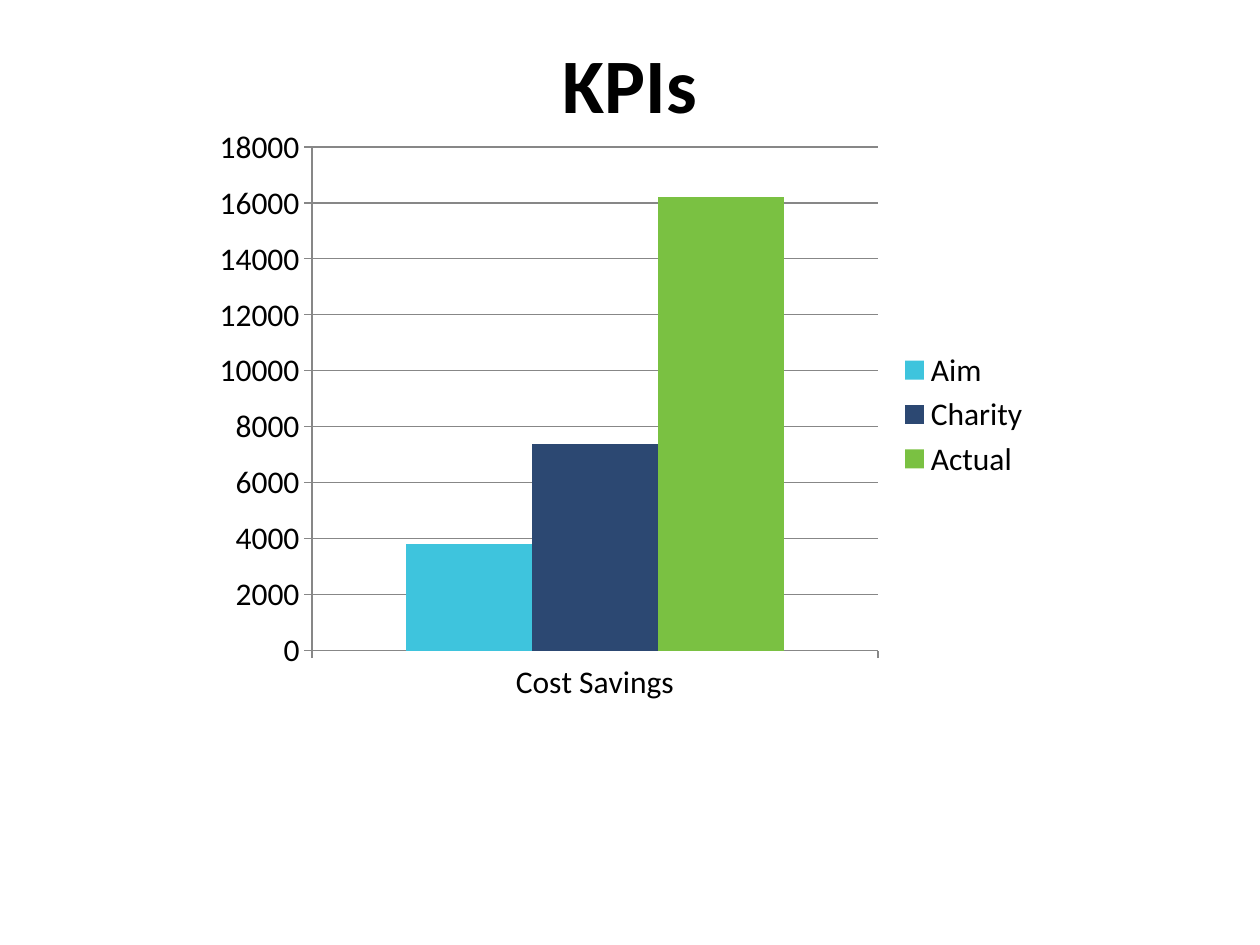
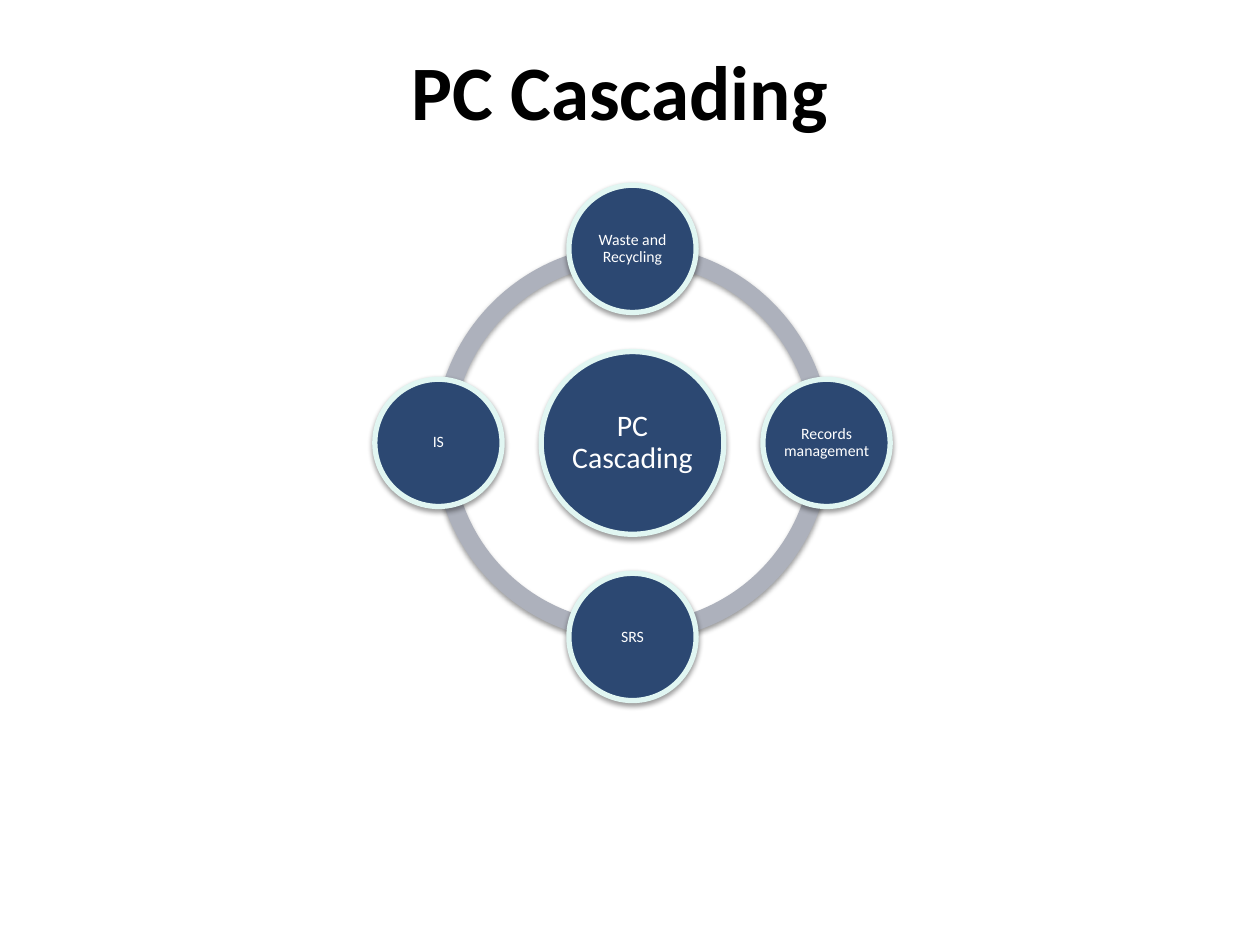
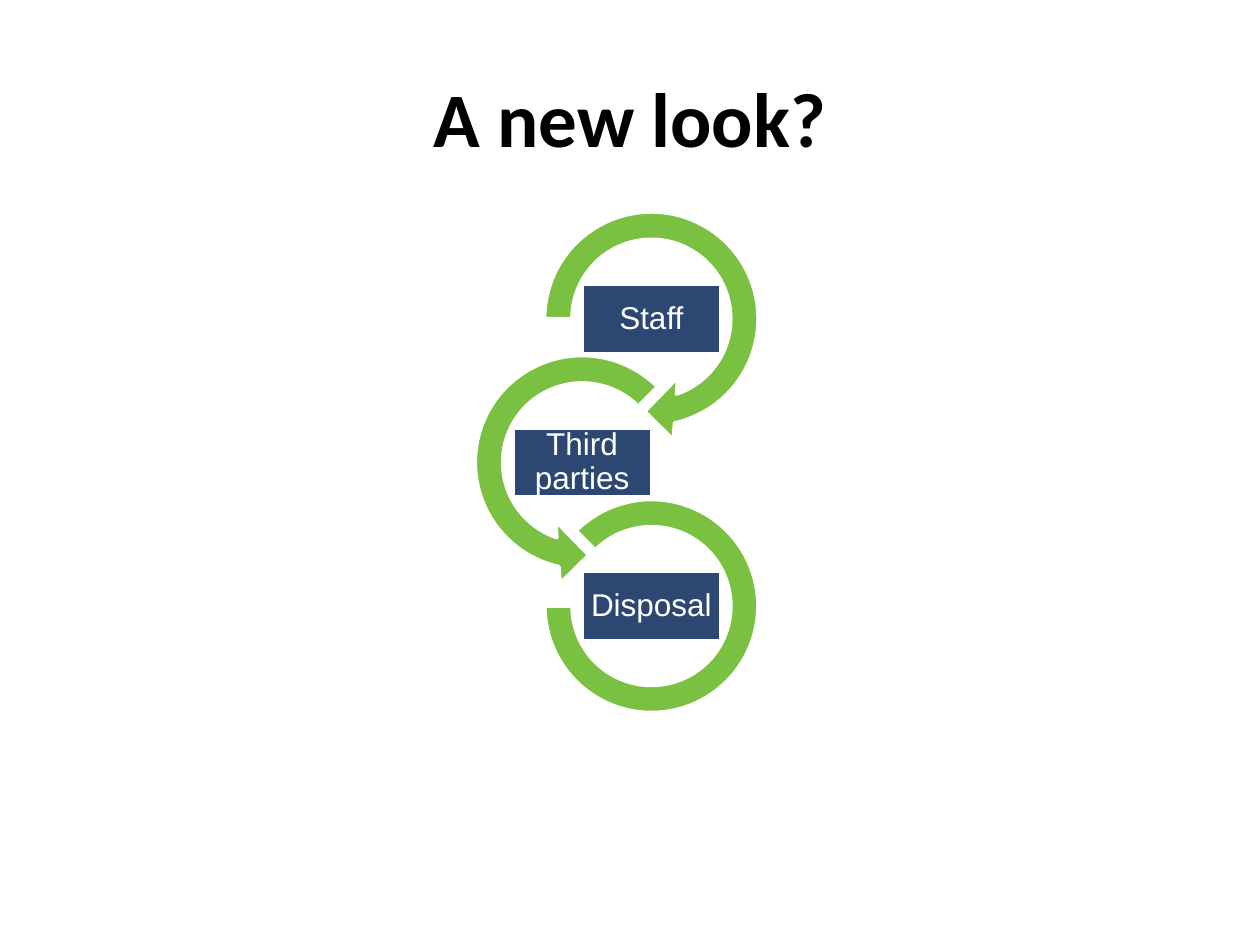
import math

from lxml import etree
from pptx import Presentation
from pptx.chart.data import CategoryChartData
from pptx.dml.color import RGBColor
from pptx.enum.chart import XL_CHART_TYPE, XL_LEGEND_POSITION, XL_TICK_MARK
from pptx.enum.shapes import MSO_SHAPE
from pptx.enum.text import MSO_ANCHOR, PP_ALIGN
from pptx.oxml.ns import qn
from pptx.util import Inches, Pt

COLUMNS = XL_CHART_TYPE.COLUMN_CLUSTERED
OUTSIDE = XL_TICK_MARK.OUTSIDE
LEGEND_RIGHT = XL_LEGEND_POSITION.RIGHT
ARC = MSO_SHAPE.BLOCK_ARC
ARROW = MSO_SHAPE.CIRCULAR_ARROW
LEFT_ARROW = MSO_SHAPE.LEFT_CIRCULAR_ARROW
CIRCLE = MSO_SHAPE.OVAL
BOX = MSO_SHAPE.RECTANGLE
MIDDLE = MSO_ANCHOR.MIDDLE
CENTER = PP_ALIGN.CENTER

BLACK, WHITE = "000000", "FFFFFF"
NAVY, GREEN, CYAN = "2C4872", "7AC142", "3EC4DD"
MINT, RING_GREY, AXIS_GREY = "E1F6F2", "ADB1BC", "878787"
TITLE_ONLY = 5

KPI_CATEGORY = "Cost Savings"
KPIS = [("Aim", 3800, CYAN), ("Charity", 7400, NAVY), ("Actual", 16200, GREEN)]

HUB = "PC Cascading"
SATELLITES = ["Waste and Recycling", "Records management", "SRS", "IS"]
HUB_CENTER = (5.02, 3.515)
ORBIT, HUB_SIZE, SATELLITE_SIZE, RING_SIZE = 1.54, 1.45, 1.01, 3.15


def angle(degrees):
    """Adjustment value for an angle, which is stored in 60000ths of a degree."""
    return degrees * 0.6


# label, sideways place, arc shape, arc size, arc adjustments
STEPS = [
    ("Staff", 1, ARROW, 1.97, (0.11, angle(19.04), angle(75), angle(180), 0.125)),
    ("Third parties", 0, LEFT_ARROW, 1.97,
     (0.11, angle(19.04), angle(105), angle(315), 0.125)),
    ("Disposal", 1, ARC, 1.69, (angle(225), angle(180), 0.127)),
]
FIRST_STEP = (4.62, 2.53)
STEP_ACROSS, STEP_DOWN = 0.55, 1.14
BOX_SIZE = (1.1, 0.55)


def rgb(color):
    return RGBColor.from_string(color)


def style_font(font, name, size, color, bold=False):
    font.name, font.size, font.bold = name, Pt(size), bold
    font.color.rgb = rgb(color)


def add_titled_slide(deck, title, left, top, width, height):
    slide = deck.slides.add_slide(deck.slide_layouts[TITLE_ONLY])
    holder = slide.shapes.title
    holder.left, holder.top = Inches(left), Inches(top)
    holder.width, holder.height = Inches(width), Inches(height)
    holder.text_frame.text = title
    holder.text_frame.vertical_anchor = MIDDLE
    paragraph = holder.text_frame.paragraphs[0]
    paragraph.alignment = CENTER
    style_font(paragraph.font, "Calibri", 44, BLACK, bold=True)
    return slide


def add_centered(slide, kind, center, size, fill, line=None, adjustments=()):
    """Add a preset shape around its center; line is a (color, points) pair."""
    (x, y), (width, height) = center, size
    shape = slide.shapes.add_shape(kind, Inches(x - width / 2), Inches(y - height / 2),
                                   Inches(width), Inches(height))
    for index, value in enumerate(adjustments):
        shape.adjustments[index] = value
    shape.shadow.inherit = False
    shape.fill.solid()
    shape.fill.fore_color.rgb = rgb(fill)
    if line:
        shape.line.color.rgb, shape.line.width = rgb(line[0]), Pt(line[1])
    else:
        shape.line.fill.background()
    return shape


def write_label(shape, label, font_name, size, inset):
    frame = shape.text_frame
    frame.word_wrap = True
    frame.vertical_anchor = MIDDLE
    frame.margin_left = frame.margin_right = Inches(inset)
    frame.margin_top = frame.margin_bottom = Inches(inset)
    frame.text = label
    paragraph = frame.paragraphs[0]
    paragraph.alignment = CENTER
    paragraph.line_spacing = 0.9
    style_font(paragraph.font, font_name, size, WHITE)


def drop_shadow(shape):
    effects = shape.element.spPr.find(qn("a:effectLst"))
    shadow = etree.SubElement(effects, qn("a:outerShdw"), blurRad=str(Pt(3.1)),
                              dist=str(Pt(1.6)), dir="5400000", rotWithShape="0")
    color = etree.SubElement(shadow, qn("a:srgbClr"), val=BLACK)
    etree.SubElement(color, qn("a:alpha"), val="38000")


def build_kpis(deck):
    slide = add_titled_slide(deck, "KPIs", 0, 0, 10, 1.31)
    data = CategoryChartData()
    data.categories = [KPI_CATEGORY]
    for name, value, _ in KPIS:
        data.add_series(name, [value])
    chart = slide.shapes.add_chart(COLUMNS, Inches(1.61), Inches(0.92),
                                   Inches(6.67), Inches(4.74), data).chart
    style_font(chart.font, "Calibri", 18, BLACK)
    chart.has_title = False
    chart.has_legend = True
    chart.legend.position = LEGEND_RIGHT
    chart.legend.include_in_layout = False

    plot = chart.plots[0]
    plot.gap_width, plot.overlap = 150, 0
    plot.vary_by_categories = False
    for series, (_, _, color) in zip(plot.series, KPIS):
        series.format.fill.solid()
        series.format.fill.fore_color.rgb = rgb(color)

    values = chart.value_axis
    values.minimum_scale, values.maximum_scale, values.major_unit = 0, 18000, 2000
    values.has_major_gridlines = True
    for axis in (values, chart.category_axis):
        axis.major_tick_mark = OUTSIDE
    for part in (values, chart.category_axis, values.major_gridlines):
        part.format.line.color.rgb = rgb(AXIS_GREY)
        part.format.line.width = Pt(0.75)


def build_cascade(deck):
    slide = add_titled_slide(deck, HUB, 0.43, 0.29, 8.98, 0.84)
    sector = 360 / len(SATELLITES)
    for index in range(len(SATELLITES)):
        start = index * sector
        ends = (angle(start), angle((start + sector) % 360), 0.046)
        drop_shadow(add_centered(slide, ARC, HUB_CENTER, (RING_SIZE, RING_SIZE),
                                 RING_GREY, adjustments=ends))

    circles = [(HUB, HUB_CENTER, HUB_SIZE, 17, 0.02)]
    for index, label in enumerate(SATELLITES):
        turn = math.radians(index * sector - 90)
        center = (HUB_CENTER[0] + ORBIT * math.cos(turn),
                  HUB_CENTER[1] + ORBIT * math.sin(turn))
        circles.append((label, center, SATELLITE_SIZE, 9, 0.01))
    for label, center, size, points, inset in circles:
        circle = add_centered(slide, CIRCLE, center, (size, size), NAVY, (MINT, 3))
        drop_shadow(circle)
        write_label(circle, label, "Calibri", points, inset)


def build_new_look(deck):
    slide = add_titled_slide(deck, "A new look?", 0, 0.3, 10, 1.25)
    outline = (WHITE, 2)
    for row, (label, column, kind, size, adjustments) in enumerate(STEPS):
        center = (FIRST_STEP[0] + column * STEP_ACROSS, FIRST_STEP[1] + row * STEP_DOWN)
        add_centered(slide, kind, center, (size, size), GREEN, outline, adjustments)
        box = add_centered(slide, BOX, center, BOX_SIZE, NAVY, outline)
        write_label(box, label, "Arial", 18, 0.01)


def main():
    deck = Presentation()
    deck.slide_width, deck.slide_height = Inches(10), Inches(7.5)
    build_kpis(deck)
    build_cascade(deck)
    build_new_look(deck)
    deck.save("out.pptx")


if __name__ == "__main__":
    main()
